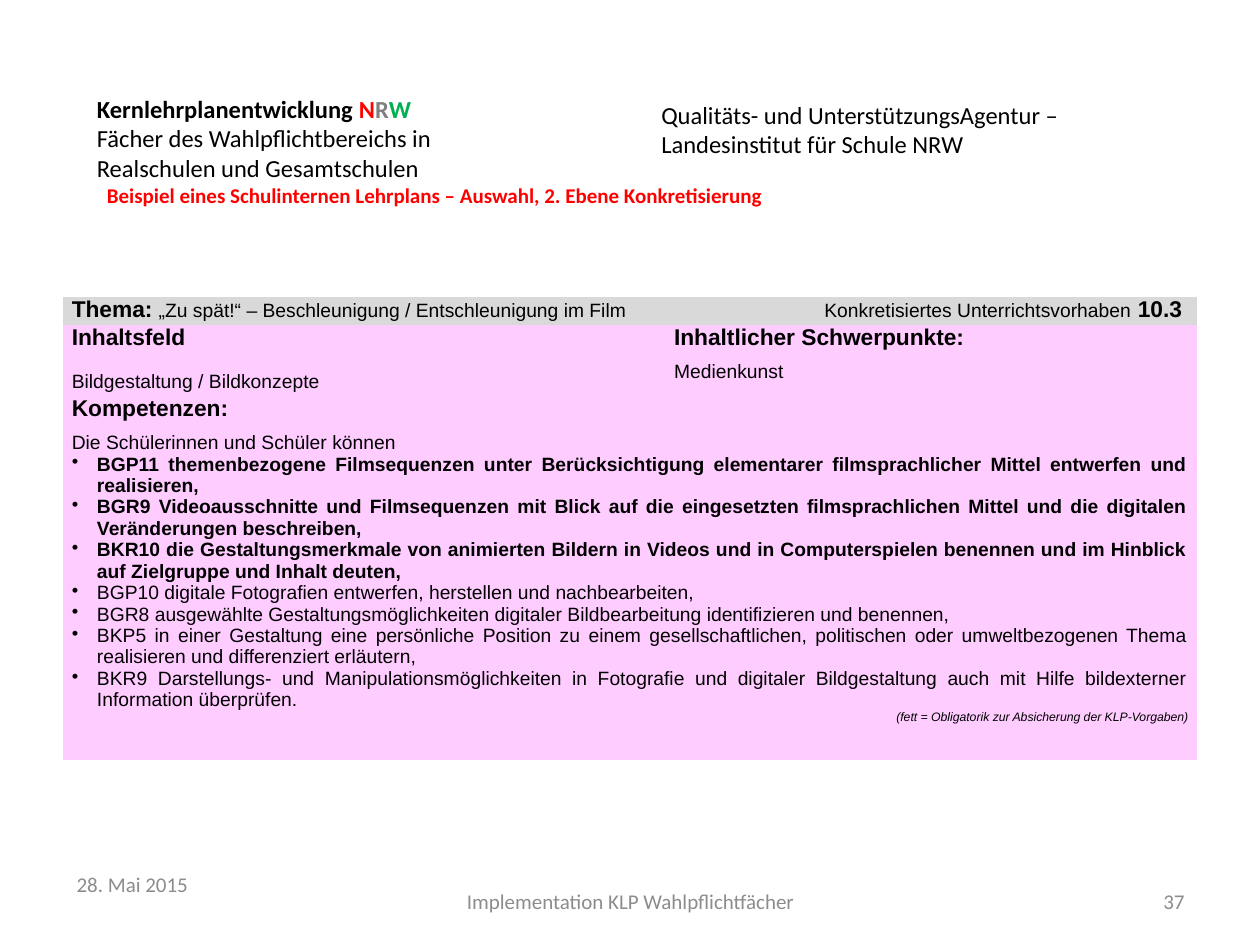
from lxml import etree
from pptx import Presentation
from pptx import util as u
from pptx.dml.color import RGBColor
from pptx.enum import text
from pptx.oxml import ns

BLACK = RGBColor(0x00, 0x00, 0x00)
RED = RGBColor(0xFF, 0x00, 0x00)
GREY = RGBColor(0x7F, 0x7F, 0x7F)
GREEN = RGBColor(0x00, 0xB0, 0x50)
FOOTER = RGBColor(0x8C, 0x8C, 0x8C)
BAND = RGBColor(0xD9, 0xD9, 0xD9)
PINK = RGBColor(0xFF, 0xCC, 0xFF)

LEFT, CENTER = text.PP_ALIGN.LEFT, text.PP_ALIGN.CENTER
RIGHT, JUSTIFY = text.PP_ALIGN.RIGHT, text.PP_ALIGN.JUSTIFY
NO_GRID = "{2D5ABB26-0587-4C30-8999-92F81FD0307C}"

HEADING = dict(size=13, bold=True)

COMPETENCES = [
    ("BGP11 themenbezogene Filmsequenzen unter Berücksichtigung elementarer "
     "filmsprachlicher Mittel entwerfen und realisieren,", True),
    ("BGR9 Videoausschnitte und Filmsequenzen mit Blick auf die eingesetzten "
     "filmsprachlichen Mittel und die digitalen Veränderungen beschreiben,", True),
    ("BKR10 die Gestaltungsmerkmale von animierten Bildern in Videos und in "
     "Computerspielen benennen und im Hinblick auf Zielgruppe und Inhalt deuten,", True),
    ("BGP10 digitale Fotografien entwerfen, herstellen und nachbearbeiten,", False),
    ("BGR8 ausgewählte Gestaltungsmöglichkeiten digitaler Bildbearbeitung "
     "identifizieren und benennen,", False),
    ("BKP5 in einer Gestaltung eine persönliche Position zu einem gesellschaftlichen, "
     "politischen oder umweltbezogenen Thema realisieren und differenziert erläutern,", False),
    ("BKR9 Darstellungs- und Manipulationsmöglichkeiten in Fotografie und digitaler "
     "Bildgestaltung auch mit Hilfe bildexterner Information überprüfen.", False),
]


def write(paragraph, words, size=11, face="Arial", color=BLACK, bold=False, italic=False):
    """Append one formatted run to a paragraph."""
    run = paragraph.add_run()
    run.text = words
    font = run.font
    font.size, font.name, font.bold, font.italic = u.Pt(size), face, bold, italic
    font.color.rgb = color


class Page:
    """Slide on a grid of 100 columns by 75 rows, with its own style."""

    def __init__(self, deck):
        self.column = deck.slide_width / 100
        self.row = deck.slide_height / 75
        self.slide = deck.slides.add_slide(deck.slide_layouts[6])

    def across(self, columns):
        return u.Emu(round(columns * self.column))

    def down(self, rows):
        return u.Emu(round(rows * self.row))

    def area(self, left, top, width, height):
        return self.across(left), self.down(top), self.across(width), self.down(height)

    def paragraph(self, frame, *runs, align=JUSTIFY, before=0, after=0, bullet=False):
        first = frame.paragraphs[0]
        line = frame.add_paragraph() if first.runs else first
        line.alignment = align
        line.space_before, line.space_after = u.Pt(before), u.Pt(after)
        if bullet:
            props = line._p.get_or_add_pPr()
            indent = self.across(2)
            props.set("marL", str(indent))
            props.set("indent", str(-indent))
            etree.SubElement(props, ns.qn("a:buChar")).set("char", "•")
        for words, style in runs:
            write(line, words, **style)

    def label(self, area, *lines, align=LEFT):
        frame = self.slide.shapes.add_textbox(*self.area(*area)).text_frame
        frame.word_wrap = True
        frame.vertical_anchor = text.MSO_ANCHOR.MIDDLE
        for runs in lines:
            self.paragraph(frame, *runs, align=align)

    def table(self, left, top, columns, rows):
        area = self.area(left, top, sum(columns), sum(rows))
        grid = self.slide.shapes.add_table(len(rows), len(columns), *area).table
        grid.first_row = grid.horz_banding = False
        grid._tbl.tblPr.find(ns.qn("a:tableStyleId")).text = NO_GRID
        for column, width in zip(grid.columns, columns):
            column.width = self.across(width)
        for row, height in zip(grid.rows, rows):
            row.height = self.down(height)
        return grid

    def cell(self, grid, row, column, fill):
        cell = grid.cell(row, column)
        cell.fill.solid()
        cell.fill.fore_color.rgb = fill
        cell.margin_left = cell.margin_right = self.across(0.7)
        cell.margin_top = cell.margin_bottom = 0
        return cell.text_frame


def add_header(page):
    plain = dict(size=14, face="Calibri")
    strong = dict(plain, bold=True)
    page.label(
        (6.7, 4.7, 33.9, 12.5),
        [("Kernlehrplanentwicklung ", strong), ("N", dict(strong, color=RED)),
         ("R", dict(strong, color=GREY)), ("W", dict(strong, color=GREEN))],
        [("Fächer des Wahlpflichtbereichs in", plain)],
        [("Realschulen und Gesamtschulen", plain)])
    page.label(
        (51.5, 4, 34, 12.5),
        [("Qualitäts- und UnterstützungsAgentur –", plain)],
        [("Landesinstitut für Schule NRW", plain)])
    page.label(
        (7.5, 13.9, 55.9, 3.1),
        [("Beispiel eines Schulinternen Lehrplans – Auswahl, 2. Ebene Konkretisierung",
          dict(size=12, face="Calibri", color=RED, bold=True))])


def add_plan(page):
    plan = page.table(5, 23.6, columns=(47.8, 42.2), rows=(2.1, 5.4, 28.9))
    plan.cell(2, 0).merge(plan.cell(2, 1))

    topic = page.cell(plan, 0, 0, BAND)
    page.paragraph(topic, ("Thema: ", HEADING),
                   ("„Zu spät!“ – Beschleunigung / Entschleunigung im Film", {}))
    unit = page.cell(plan, 0, 1, BAND)
    page.paragraph(unit, ("Konkretisiertes Unterrichtsvorhaben", {}),
                   (" 10.3 ", HEADING), align=RIGHT)

    field = page.cell(plan, 1, 0, PINK)
    page.paragraph(field, ("Inhaltsfeld", HEADING), after=6)
    page.paragraph(field, ("Bildgestaltung / Bildkonzepte", {}), before=6)
    focus = page.cell(plan, 1, 1, PINK)
    page.paragraph(focus, ("Inhaltlicher Schwerpunkte:", HEADING), after=6)
    page.paragraph(focus, ("Medienkunst", {}))

    skills = page.cell(plan, 2, 0, PINK)
    page.paragraph(skills, ("Kompetenzen:", HEADING), after=6)
    page.paragraph(skills, ("Die Schülerinnen und Schüler können", {}))
    for competence, binding in COMPETENCES:
        page.paragraph(skills, (competence, dict(bold=binding)), bullet=True)
    page.paragraph(skills, ("(fett = Obligatorik zur Absicherung der KLP-Vorgaben)",
                            dict(size=7, italic=True)), align=RIGHT)


def add_footer(page):
    for area, words, align in (
            ((5.1, 68.2, 23.3, 4), "28. Mai 2015", LEFT),
            ((34.2, 69.5, 31.7, 4), "Implementation KLP Wahlpflichtfächer", CENTER),
            ((71.7, 69.5, 23.3, 4), "37", RIGHT)):
        page.label(area, [(words, dict(size=12, face="Calibri", color=FOOTER))], align=align)


def main():
    deck = Presentation()
    deck.slide_width, deck.slide_height = u.Inches(10), u.Inches(7.5)
    page = Page(deck)
    add_header(page)
    add_plan(page)
    add_footer(page)
    deck.save("out.pptx")


if __name__ == "__main__":
    main()
